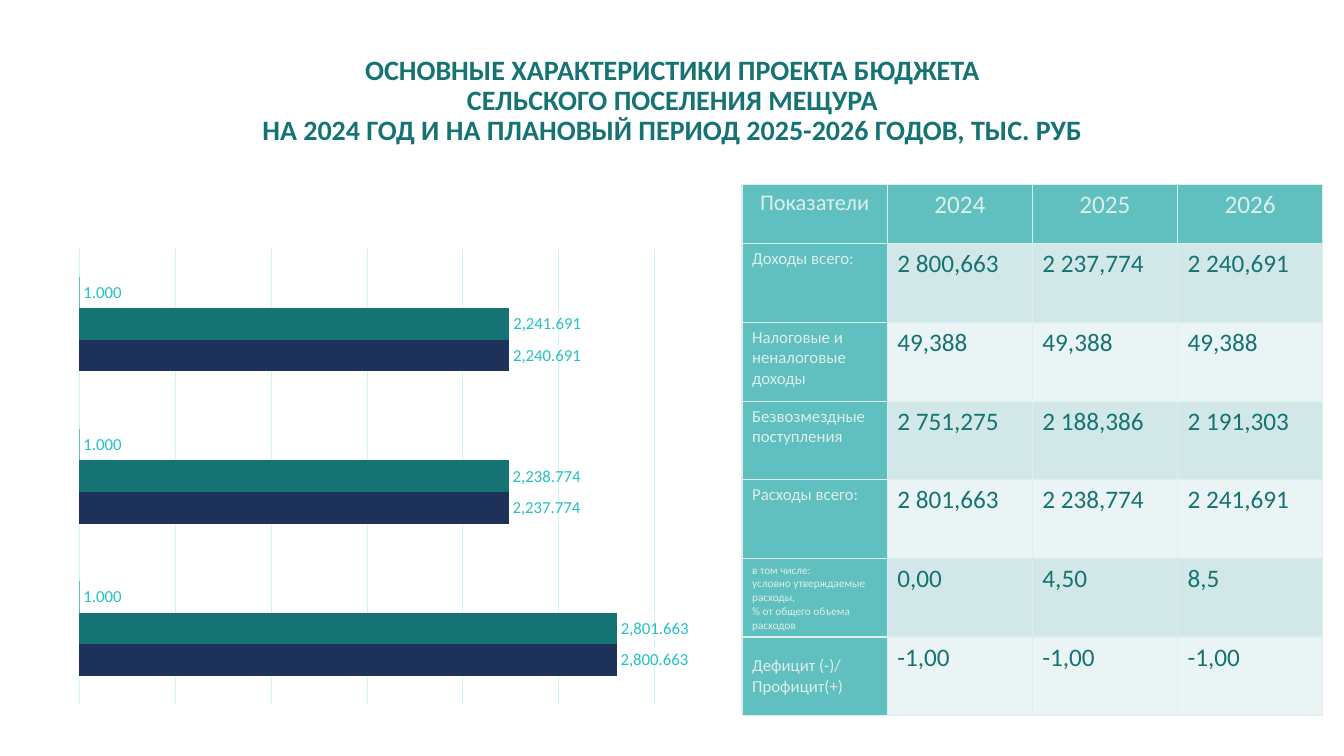
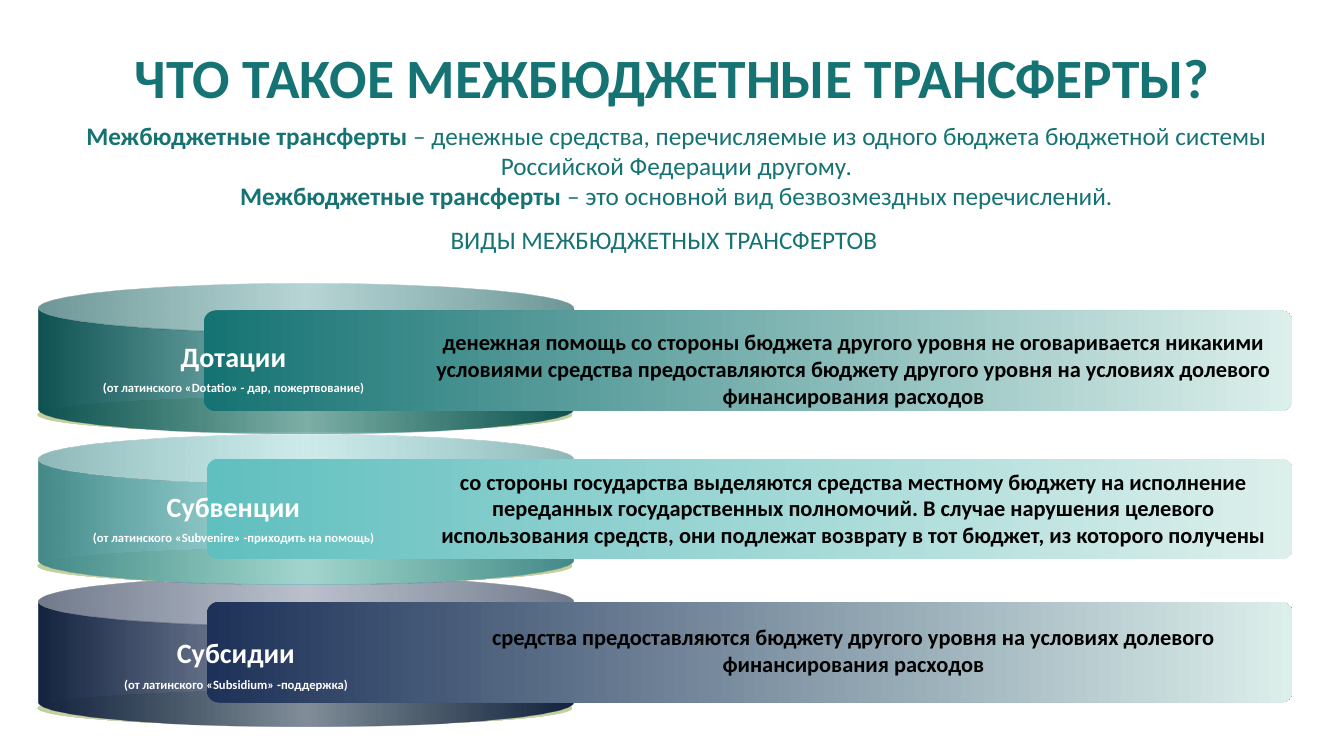
from dataclasses import dataclass
from lxml import etree
from pptx import Presentation
from pptx.chart.data import CategoryChartData
from pptx.dml.color import RGBColor
from pptx.enum.chart import XL_CHART_TYPE, XL_LABEL_POSITION
from pptx.enum.shapes import MSO_SHAPE
from pptx.enum.text import MSO_ANCHOR, PP_ALIGN
from pptx.oxml.ns import qn
from pptx.util import Inches, Pt

LEFT, CENTER = PP_ALIGN.LEFT, PP_ALIGN.CENTER
TOP, MIDDLE = MSO_ANCHOR.TOP, MSO_ANCHOR.MIDDLE
CAN, OVAL, ROUND = MSO_SHAPE.CAN, MSO_SHAPE.OVAL, MSO_SHAPE.ROUNDED_RECTANGLE
BARS, OUTSIDE = XL_CHART_TYPE.BAR_CLUSTERED, XL_LABEL_POSITION.OUTSIDE_END


@dataclass(frozen=True)
class Style:
    size: float
    color: str
    bold: bool = False


class Theme:
    font = "Calibri"
    teal, aqua, navy = "167373", "60BFBF", "1E3259"
    pale, grid, label = "DCEFEB", "D0F6F6", "25C1C1"
    bands = ("D2E8E8", "EAF4F4")
    rim = ((0, "C1CF9D", 100), (50, "E7ECDC", 100), (100, "C1CF9D", 100))
    title = Style(20, teal, True)
    large = Style(39.6, teal, True)
    body = Style(18, teal)
    strong = Style(18, teal, True)
    head = Style(16, pale)
    year = Style(18, pale)
    item = Style(12, pale)
    small = Style(8, pale)
    mark = Style(12, label)
    kind = Style(20, "FFFFFF", True)
    root = Style(9, "FFFFFF", True)
    note = Style(16, "000000", True)


def put(item, **vals):
    for key, val in vals.items():
        setattr(item, key, val)


def rgb(code):
    return RGBColor.from_string(code)


def box(*sides):
    return [Inches(side) for side in sides]


class Deck:
    def __init__(self, theme):
        self.theme = theme
        self.show = Presentation()
        put(self.show, slide_width=Inches(13.33), slide_height=Inches(7.5))
        self.slide = None

    def page(self):
        self.slide = self.show.slides.add_slide(self.show.slide_layouts[6])

    def ink(self, font, style):
        put(font, name=self.theme.font, size=Pt(style.size), bold=style.bold)
        font.color.rgb = rgb(style.color)

    def lay(self, frame, paras, gap=0, **form):
        for row, runs in enumerate(paras):
            para = frame.add_paragraph() if row else frame.paragraphs[0]
            put(para, **form)
            if row and gap:
                para.space_before = Pt(gap)
            for text, style in runs:
                for part, line in enumerate(text.split("\v")):
                    if part:
                        para.add_line_break()
                    run = para.add_run()
                    run.text = line
                    self.ink(run.font, style)

    def text(self, place, paras, wrap=True, anchor=TOP, **form):
        frame = self.slide.shapes.add_textbox(*box(*place)).text_frame
        put(frame, word_wrap=wrap, vertical_anchor=anchor)
        self.lay(frame, paras, **form)

    def title(self, place, text, style):
        self.text(place, [[(text, style)]], anchor=MIDDLE,
                  alignment=CENTER, line_spacing=0.9)

    def shape(self, kind, place, stops, bend=None):
        shape = self.slide.shapes.add_shape(kind, *box(*place))
        shape.shadow.inherit = False
        shape.line.fill.background()
        if bend:
            shape.adjustments[0] = bend
        shape.fill.gradient()
        shape.fill.gradient_angle = 0
        ramp = shape.element.find(".//" + qn("a:gsLst"))
        ramp.clear()
        for pos, code, alpha in stops:
            stop = etree.SubElement(ramp, qn("a:gs"), pos=str(pos * 1000))
            color = etree.SubElement(stop, qn("a:srgbClr"), val=code)
            if alpha < 100:
                etree.SubElement(color, qn("a:alpha"), val=str(alpha * 1000))

    def chart(self, place, plot, cats, series):
        data = CategoryChartData(number_format="#,##0.000")
        data.categories = cats
        for name, vals, code in series:
            data.add_series(name, vals)
        chart = self.slide.shapes.add_chart(BARS, *box(*place), data).chart
        put(chart, has_legend=False, has_title=False)
        self.ink(chart.font, Style(10, self.theme.teal))
        put(chart.category_axis, visible=False, has_major_gridlines=False)
        axis = chart.value_axis
        put(axis, visible=False, has_major_gridlines=True, minimum_scale=0,
            maximum_scale=3000, major_unit=500)
        line = axis.major_gridlines.format.line
        line.width = Pt(0.75)
        line.color.rgb = rgb(self.theme.grid)
        put(chart.plots[0], gap_width=182, overlap=0, vary_by_categories=False)
        for bars, (name, vals, code) in zip(chart.plots[0].series, series):
            bars.format.fill.solid()
            bars.format.fill.fore_color.rgb = rgb(code)
            labels = bars.data_labels
            put(labels, show_value=True, position=OUTSIDE,
                number_format="#,##0.000", number_format_is_linked=False)
            self.ink(labels.font, self.theme.mark)
        self.inset(chart, plot)

    def inset(self, chart, plot):
        area = chart.element.find(".//" + qn("c:plotArea"))
        for old in area.findall(qn("c:layout")):
            area.remove(old)
        layout = etree.Element(qn("c:layout"))
        area.insert(0, layout)
        manual = etree.SubElement(layout, qn("c:manualLayout"))
        parts = [("layoutTarget", "inner"), ("xMode", "edge"), ("yMode", "edge")]
        for tag, val in parts + list(zip("xywh", plot)):
            etree.SubElement(manual, qn("c:" + tag), val=str(val))

    def cell(self, cell, paras, fill, anchor=TOP, align=LEFT):
        self.lay(cell.text_frame, paras, alignment=align)
        cell.vertical_anchor = anchor
        cell.fill.solid()
        cell.fill.fore_color.rgb = rgb(fill)
        props = cell._tc.get_or_add_tcPr()
        for spot, side in enumerate(("lnL", "lnR", "lnT", "lnB")):
            edge = etree.Element(qn("a:" + side), w=str(Pt(1)))
            solid = etree.SubElement(edge, qn("a:solidFill"))
            etree.SubElement(solid, qn("a:srgbClr"), val=self.theme.pale)
            props.insert(spot, edge)

    def table(self, place, head, rows):
        look = self.theme
        grid = self.slide.shapes.add_table(
            len(rows) + 1, len(head), *box(*place)).table
        put(grid, first_row=False, horz_banding=False)
        for col in grid.columns:
            col.width = Inches(1.44)
        for row, line in enumerate(grid.rows):
            line.height = Inches(0.78 if row else 0.59)
        for col, text in enumerate(head):
            style = look.year if col else look.head
            self.cell(grid.cell(0, col), [[(text, style)]], look.aqua,
                      align=CENTER)
        for row, (lines, style, anchor, vals) in enumerate(rows, 1):
            self.cell(grid.cell(row, 0), [[(line, style)] for line in lines],
                      look.aqua, anchor)
            for col, val in enumerate(vals, 1):
                self.cell(grid.cell(row, col), [[(val, look.body)]],
                          look.bands[(row - 1) % 2])


def budget(deck):
    look = deck.theme
    deck.page()
    deck.title((0.92, 0.16, 11.5, 1.69),
               "ОСНОВНЫЕ ХАРАКТЕРИСТИКИ ПРОЕКТА БЮДЖЕТА\v"
               "СЕЛЬСКОГО ПОСЕЛЕНИЯ МЕЩУРА\v"
               "НА 2024 ГОД И НА ПЛАНОВЫЙ ПЕРИОД 2025-2026 ГОДОВ, ТЫС. РУБ",
               look.title)
    deck.chart((0.32, 1.88, 6.64, 5.27), (0.07, 0.11, 0.86, 0.86),
               ("1", "2", "3"), (
        ("Series 1", (2800.663, 2237.774, 2240.691), look.navy),
        ("Series 2", (2801.663, 2238.774, 2241.691), look.teal),
        ("Series 3", (1, 1, 1), look.aqua)))
    deck.table((7.36, 1.83, 5.76, 5.27), ("Показатели", "2024", "2025", "2026"), (
        (["Доходы всего:"], look.item, TOP,
         ("2 800,663", "2 237,774", "2 240,691")),
        (["Налоговые и неналоговые доходы"], look.item, TOP, ("49,388",) * 3),
        (["Безвозмездные поступления"], look.item, TOP,
         ("2 751,275", "2 188,386", "2 191,303")),
        (["Расходы всего:"], look.item, TOP,
         ("2 801,663", "2 238,774", "2 241,691")),
        (["в том числе:", "условно утверждаемые расходы,",
          "% от общего объема расходов"], look.small, TOP,
         ("0,00", "4,50", "8,5")),
        (["Дефицит (-)/ Профицит(+)"], look.item, MIDDLE, ("-1,00",) * 3)))


def grants(deck):
    look = deck.theme
    deck.page()
    deck.title((0.92, 0.4, 11.5, 0.79),
               "ЧТО ТАКОЕ МЕЖБЮДЖЕТНЫЕ ТРАНСФЕРТЫ?", look.large)
    term = ("Межбюджетные трансферты ", look.strong)
    deck.text((0.41, 1.14, 12.6, 1.31), [
        [term, ("– денежные средства, перечисляемые из одного бюджета бюджетной "
                "системы Российской Федерации другому.", look.body)],
        [term, ("– это основной вид безвозмездных перечислений.", look.body)],
    ], alignment=CENTER)
    kinds = (
        (2.81, look.teal, "105252", (2.02, 3.08), (0.52, 3.32), 3.21,
         "Дотации", "(от латинского «Dotatio» - дар, пожертвование)",
         "денежная помощь со стороны бюджета другого уровня не оговаривается "
         "никакими условиями средства предоставляются бюджету другого уровня "
         "на условиях долевого финансирования расходов"),
        (4.31, look.aqua, "458989", (2.05, 4.55), (0.52, 4.81), 4.59,
         "Субвенции", "(от латинского «Subvenire» -приходить на помощь)",
         "со стороны государства выделяются средства местному бюджету на "
         "исполнение переданных государственных полномочий. В случае нарушения "
         "целевого использования средств, они подлежат возврату в тот бюджет, "
         "из которого получены"),
        (5.72, look.navy, "152440", (2.05, 5.97), (0.57, 6.26), 6.13,
         "Субсидии", "(от латинского «Subsidium» -поддержка)",
         "средства предоставляются бюджету другого уровня на условиях долевого "
         "финансирования расходов"))
    for top, main, dark, *rest in reversed(kinds):
        deck.shape(OVAL, (0.37, top + 1.13, 5.31, 0.35), look.rim)
        deck.shape(CAN, (0.38, top, 5.31, 1.49),
                   ((0, dark, 100), (50, main, 50), (100, dark, 100)), 0.33)
    for top, main, dark, (left, high), spot, level, name, root, note in kinds:
        deck.shape(ROUND, (left, high, 12.82 - left, 1),
                   ((0, main, 100), (100, look.pale, 100)), 0.12)
        deck.text((*spot, 4.11 - spot[0], 0.7),
                  [[(name, look.kind)], [(root, look.root)]],
                  alignment=CENTER, gap=5)
        deck.text((4.11, level, 8.71, 0.91), [[(note, look.note)]],
                  alignment=CENTER)
    deck.text((4.37, 2.18, 4.47, 0.4),
              [[("ВИДЫ МЕЖБЮДЖЕТНЫХ ТРАНСФЕРТОВ", look.body)]], wrap=False)


def main():
    deck = Deck(Theme)
    budget(deck)
    grants(deck)
    deck.show.save("out.pptx")


if __name__ == "__main__":
    main()
